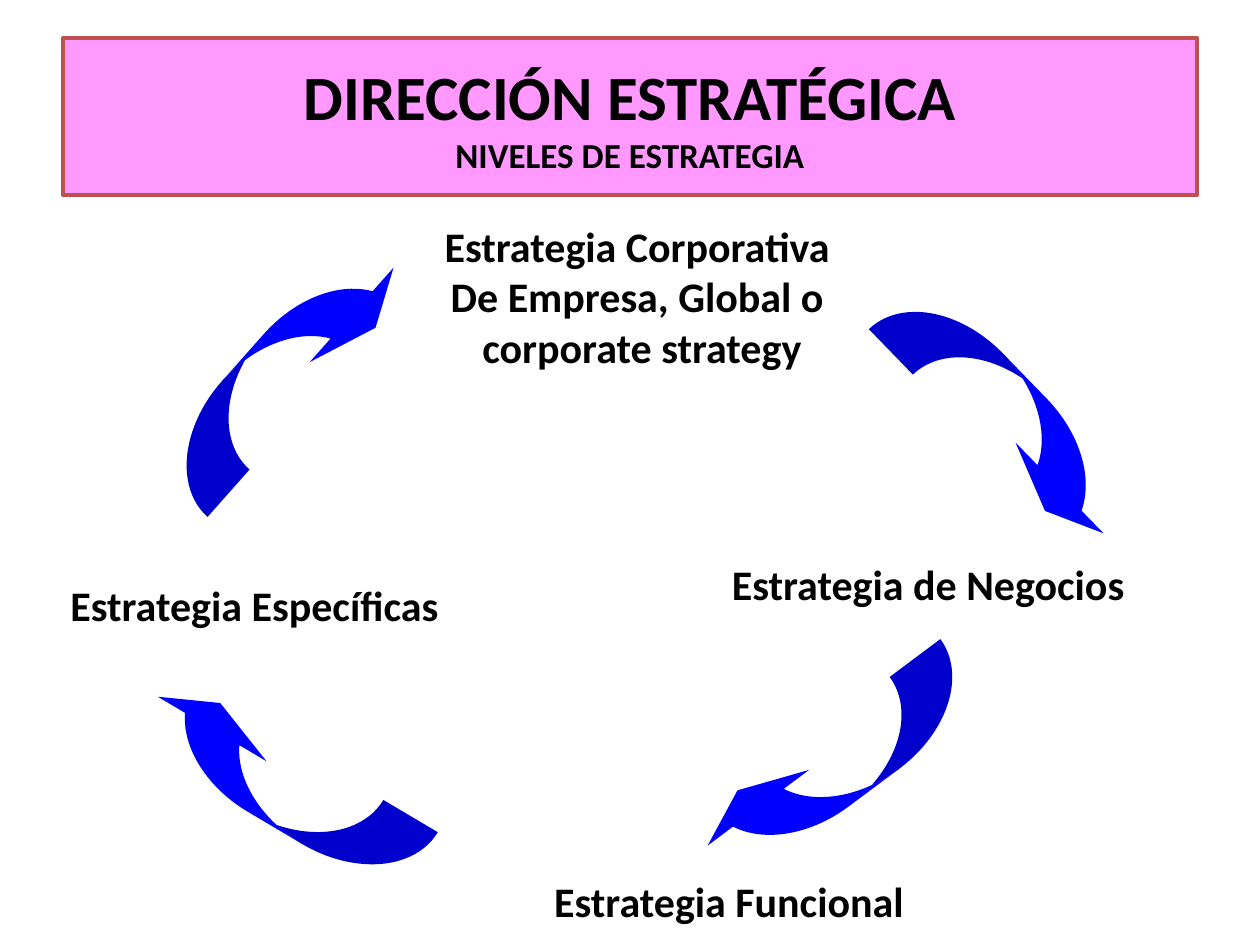
from pptx import Presentation
from pptx.dml.color import RGBColor
from pptx.enum.shapes import MSO_SHAPE
from pptx.enum.text import MSO_ANCHOR, MSO_AUTO_SIZE, PP_ALIGN
from pptx.util import Inches, Pt

FONT = "Calibri"
BLACK, PINK, RED, BLUE = "000000", "FF99FF", "C0504D", "0000FF"
ARROW_SIZE = (2.51, 0.63)
ARROW_ADJUSTMENTS = (0.797, 1.593, 0.333)


def color(hex_string):
    return RGBColor.from_string(hex_string)


def add_run(paragraph, text, size=24, bold=True, fill=BLACK):
    run = paragraph.add_run()
    run.text = text
    run.font.name = FONT
    run.font.size = Pt(size)
    run.font.bold = bold
    run.font.color.rgb = color(fill)


def add_text(slide, box, lines, align=PP_ALIGN.LEFT, **run_format):
    frame = slide.shapes.add_textbox(*map(Inches, box)).text_frame
    frame.word_wrap = False
    frame.auto_size = MSO_AUTO_SIZE.SHAPE_TO_FIT_TEXT
    for index, line in enumerate(lines):
        paragraph = frame.paragraphs[0] if index == 0 else frame.add_paragraph()
        paragraph.alignment = align
        add_run(paragraph, line, **run_format)


def add_heading(slide, box, heading, subheading):
    title = slide.shapes.title
    title.left, title.top, title.width, title.height = map(Inches, box)
    title.fill.solid()
    title.fill.fore_color.rgb = color(PINK)
    title.line.color.rgb = color(RED)
    title.line.width = Pt(2)
    frame = title.text_frame
    frame.vertical_anchor = MSO_ANCHOR.MIDDLE
    frame.auto_size = MSO_AUTO_SIZE.NONE
    paragraph = frame.paragraphs[0]
    paragraph.alignment = PP_ALIGN.CENTER
    add_run(paragraph, heading, size=36)
    paragraph.add_line_break()
    add_run(paragraph, subheading, size=20)


def add_cycle_arrow(slide, left, top, rotation):
    arrow = slide.shapes.add_shape(
        MSO_SHAPE.CURVED_DOWN_ARROW, *map(Inches, (left, top, *ARROW_SIZE)))
    for index, value in enumerate(ARROW_ADJUSTMENTS):
        arrow.adjustments[index] = value
    arrow.rotation = rotation
    arrow.shadow.inherit = False
    arrow.fill.solid()
    arrow.fill.fore_color.rgb = color(BLUE)
    arrow.line.fill.background()


def add_strategy_cycle(slide, box):
    left, top, width, height = box

    # Strategy levels, clockwise from the top
    levels = [
        (2.95, 0, 3.37, 1.31, PP_ALIGN.CENTER,
         ["Estrategia Corporativa ", "De Empresa, Global o ", "corporate strategy"]),
        (width - 3.54, 2.68, 3.41, 0.5, PP_ALIGN.LEFT, ["Estrategia de Negocios"]),
        (3.84, height - 0.5, 3.1, 0.5, PP_ALIGN.LEFT, ["Estrategia Funcional"]),
        (0, 2.85, 3.25, 0.5, PP_ALIGN.LEFT, ["Estrategia Específicas"]),
    ]
    for x, y, level_width, level_height, align, lines in levels:
        add_text(slide, (left + x, top + y, level_width, level_height), lines, align=align)

    # Arrows leading from each level to the next
    arrows = [(6.28, 1.28, 45.9), (4.93, 4.06, 143.3),
              (0.52, 4.22, 210.7), (0.53, 0.94, 311.6)]
    for x, y, rotation in arrows:
        add_cycle_arrow(slide, left + x, top + y, rotation)


def main():
    presentation = Presentation()
    presentation.slide_width = Inches(10)
    presentation.slide_height = Inches(7.5)
    slide = presentation.slides.add_slide(presentation.slide_layouts[5])
    add_heading(slide, (0.5, 0.3, 9, 1.25),
                "DIRECCIÓN ESTRATÉGICA", "NIVELES DE ESTRATEGIA")
    add_strategy_cycle(slide, (0.46, 1.7, 8.79, 5.7))
    presentation.save("out.pptx")


if __name__ == "__main__":
    main()
